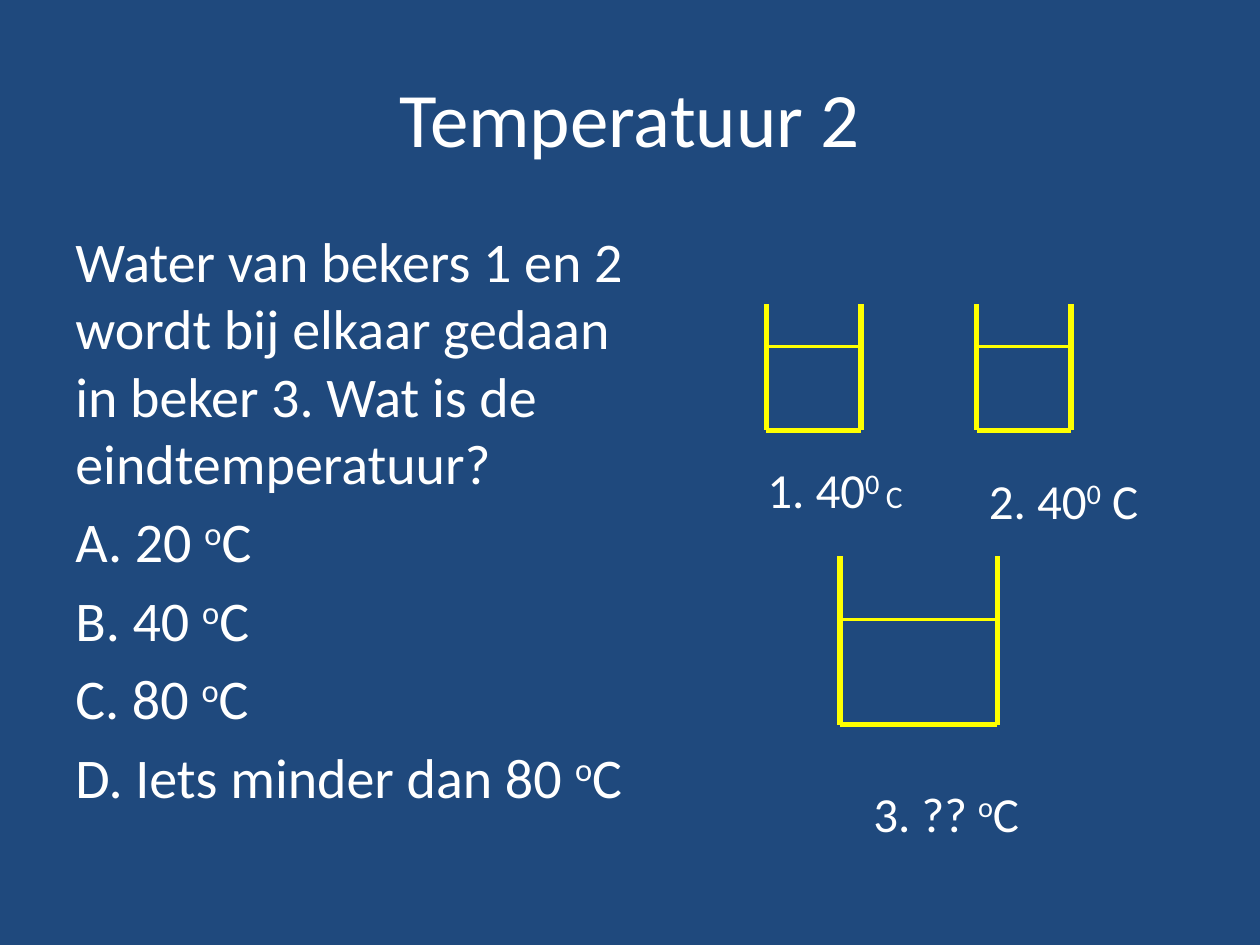
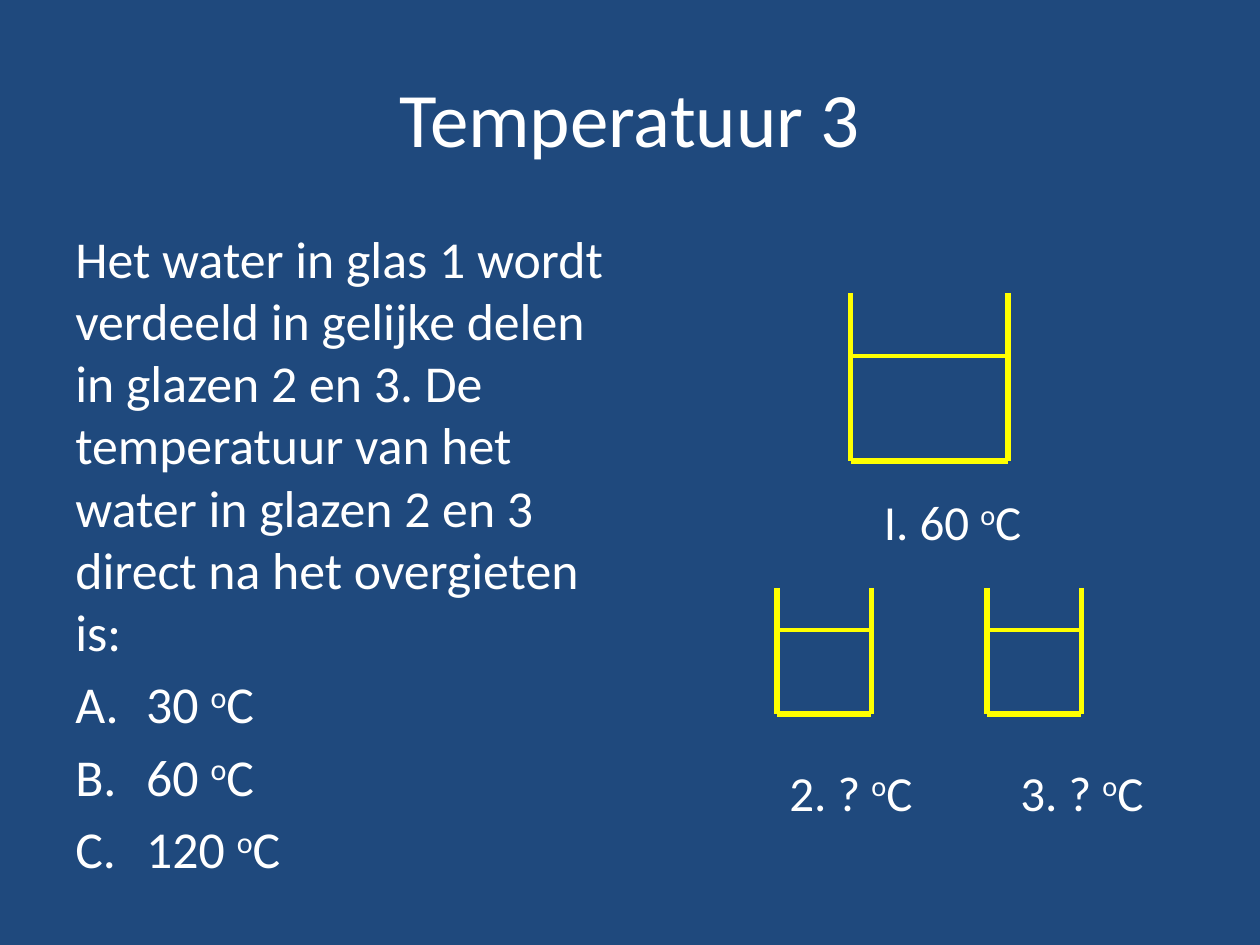
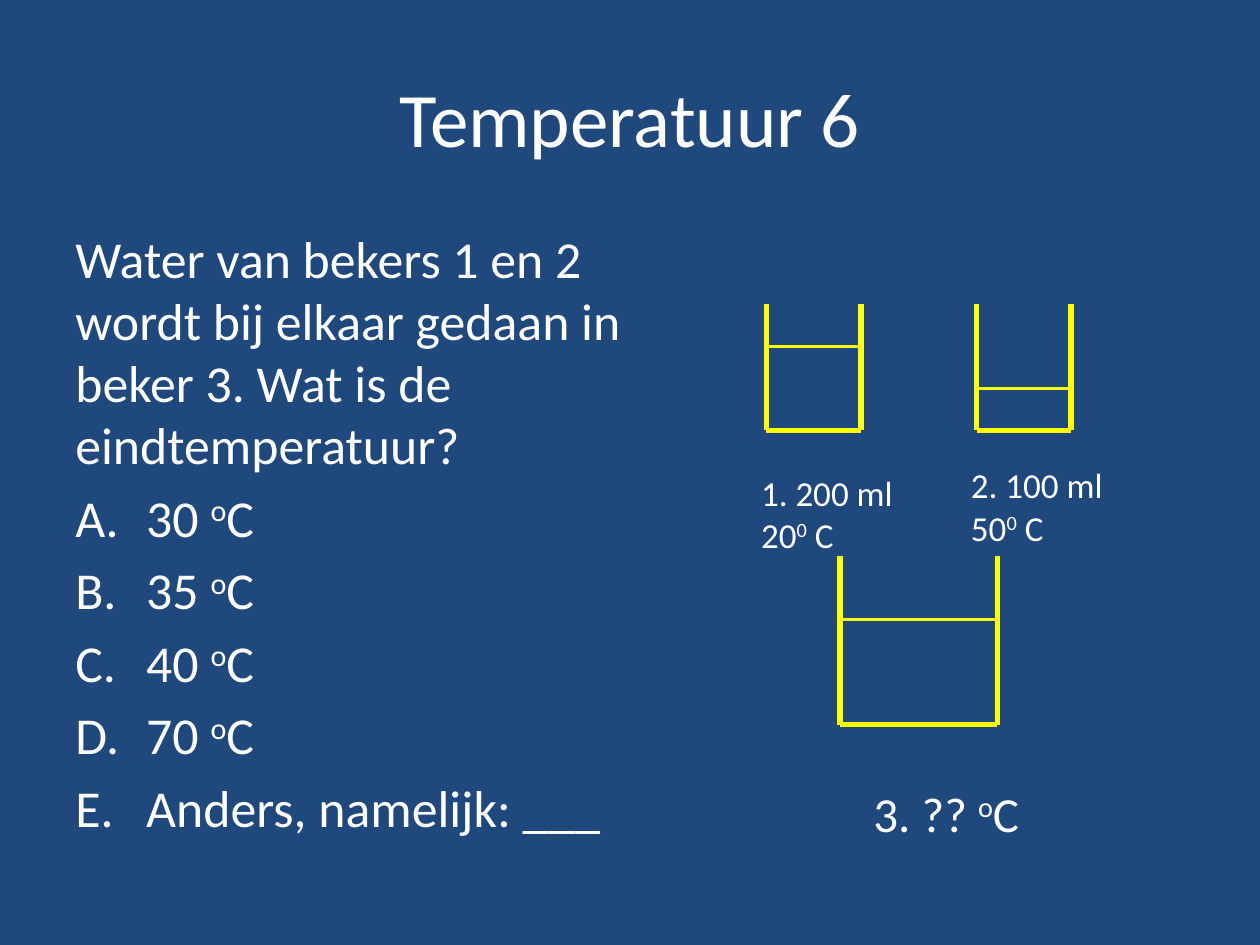
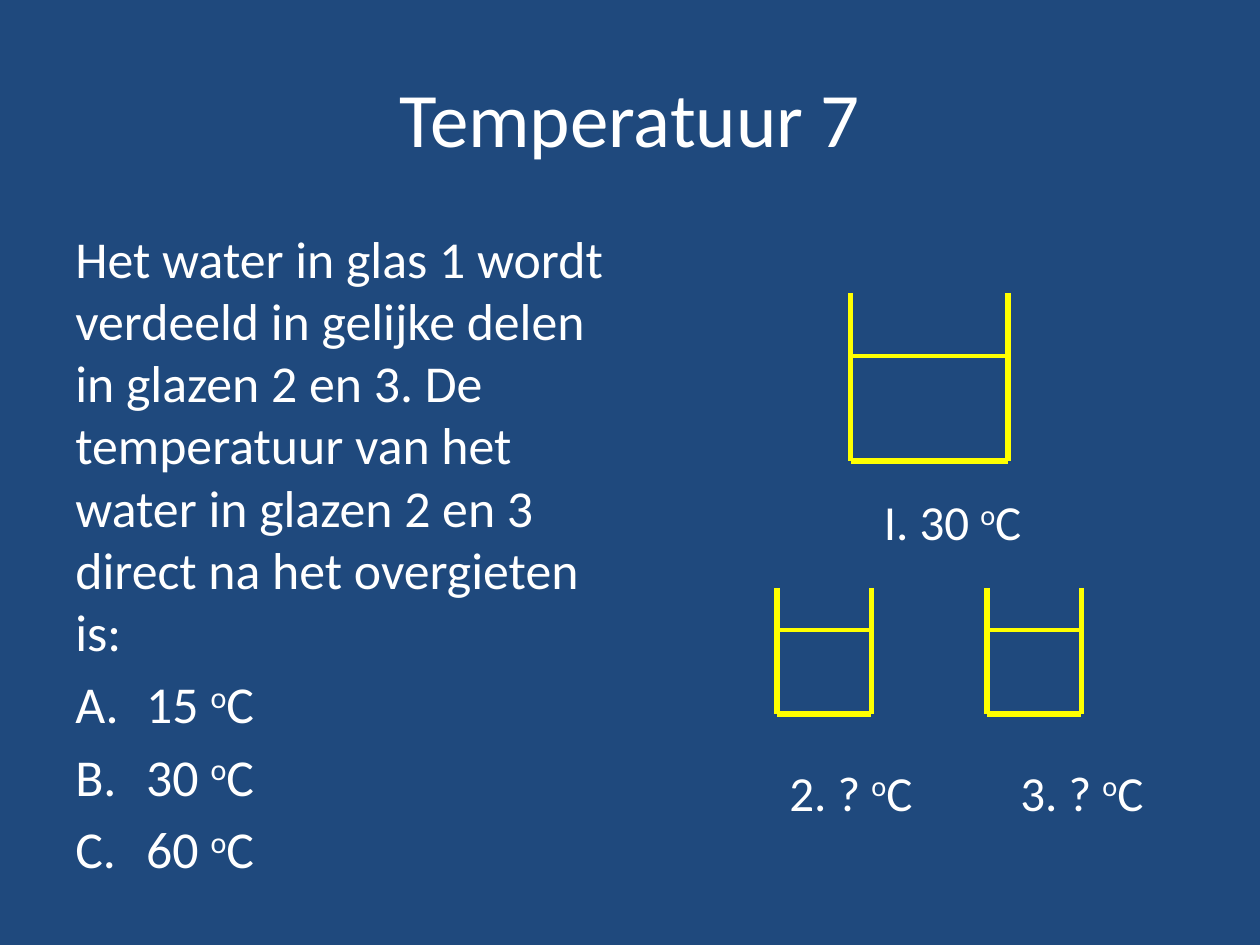
from lxml.etree import SubElement
from pptx import Presentation
from pptx.dml.color import RGBColor
from pptx.enum.shapes import MSO_CONNECTOR as Connector
from pptx.enum.text import MSO_ANCHOR as Anchor, MSO_AUTO_SIZE as AutoSize, PP_ALIGN as Align
from pptx.oxml.ns import qn
from pptx.util import Inches, Pt

COLUMNS, ROWS = 120, 90
SMALL, LARGE = (9, 12), (15, 16)
POUR_QUESTION = ("Water van bekers 1 en 2 wordt bij elkaar gedaan in beker 3. "
                 "Wat is de eindtemperatuur?")
SPLIT_QUESTION = ("Het water in glas 1 wordt verdeeld in gelijke delen in glazen 2 en 3. "
                  "De temperatuur van het water in glazen 2 en 3 direct na het overgieten is:")


def color(value):
    """Turn a hex string into a colour."""
    return RGBColor.from_string(value)


class Quiz:
    """Hold the shared style and the current slide."""

    font = "Calibri"
    ink, ground, glass = color("FFFFFF"), color("1F497D"), color("FFFF00")

    def __init__(self):
        """Start a deck with the shared background."""
        self.deck = Presentation()
        self.deck.slide_width, self.deck.slide_height = Inches(10), Inches(7.5)
        fill = self.deck.slide_master.background.fill
        fill.solid()
        fill.fore_color.rgb = self.ground

    def x(self, columns):
        """Convert grid columns to a length."""
        return round(self.deck.slide_width * columns / COLUMNS)

    def y(self, rows):
        """Convert grid rows to a length."""
        return round(self.deck.slide_height * rows / ROWS)

    def place(self, left, top, width, height):
        """Convert a grid rectangle to lengths."""
        return self.x(left), self.y(top), self.x(width), self.y(height)

    def fill_para(self, para, text, size):
        """Fill a paragraph, raising every second part between carets."""
        para.font.name, para.font.size = self.font, Pt(size)
        para.font.color.rgb = self.ink
        for index, part in enumerate(text.split("^")):
            span = para.add_run()
            span.text = part
            if index % 2:
                span._r.get_or_add_rPr().set("baseline", "30000")

    def start(self, title):
        """Add a slide with its title."""
        self.page = self.deck.slides.add_slide(self.deck.slide_layouts[5])
        box = self.page.shapes.title
        box.left, box.top, box.width, box.height = self.place(6, 3.6, 108, 15)
        box.text_frame.vertical_anchor = Anchor.MIDDLE
        para = box.text_frame.paragraphs[0]
        para.alignment = Align.CENTER
        self.fill_para(para, title, 44)

    def text(self, area, lines, size):
        """Add a text box with one paragraph per line."""
        frame = self.page.shapes.add_textbox(*self.place(*area)).text_frame
        for index, line in enumerate(lines):
            para = frame.add_paragraph() if index else frame.paragraphs[0]
            self.fill_para(para, line, size)
        return frame

    def question(self, lines, size=29.6, numbered=True):
        """Add the question with its answers."""
        frame = self.text((6, 21, 55, 59.4), lines, size)
        frame.word_wrap = True
        for index, para in enumerate(frame.paragraphs):
            para.space_before = Pt(round(size * 0.2, 1))
            if index and numbered:
                props = para._p.get_or_add_pPr()
                indent = self.x(6.75)
                props.set("marL", str(indent))
                props.set("indent", str(-indent))
                bullet = SubElement(props, qn("a:buAutoNum"), type="alphaUcPeriod")
                props.find(qn("a:defRPr")).addprevious(bullet)

    def label(self, left, top, width, *lines, size=28):
        """Add a caption to a beaker."""
        frame = self.text((left, top, width, 6.84 if len(lines) == 1 else 9.24), lines, size)
        frame.word_wrap = False
        frame.auto_size = AutoSize.SHAPE_TO_FIT_TEXT
        return frame

    def line(self, start, end, weight):
        """Draw a straight line between two grid points."""
        edge = self.page.shapes.add_connector(
            Connector.STRAIGHT, self.x(start[0]), self.y(start[1]), self.x(end[0]), self.y(end[1]))
        edge.line.color.rgb, edge.line.width = self.glass, Pt(weight)
        SubElement(edge._element.spPr, qn("a:effectLst"))

    def beaker(self, left, top, size, empty):
        """Draw an open beaker whose water starts some rows below the rim."""
        right, bottom = left + size[0], top + size[1]
        for side in (left, right):
            self.line((side, top), (side, bottom), 3)
        self.line((left, bottom), (right, bottom), 3)
        self.line((left, top + empty), (right, top + empty), 2)

    def pour(self, second_empty):
        """Draw two small beakers above the large one they fill."""
        self.beaker(73, 29, SMALL, 4)
        self.beaker(93, 29, SMALL, second_empty)
        self.beaker(80, 53, LARGE, 6)
        self.label(82, 74, 16.7, "3. ?? ^o^C")

    def split(self, number, source, answers):
        """Build a slide where a large beaker fills two small ones."""
        self.start(f"Temperatuur {number}")
        self.question([SPLIT_QUESTION, *answers])
        for left in (74, 94):
            self.beaker(left, 56, SMALL, 4)
        self.beaker(81, 27.9, LARGE, 6)
        self.label(83, 46.2, 16, f"I. {source} ^o^C")
        for left, name in ((74, 2), (96, 3)):
            self.label(left, 72, 14.5, f"{name}. ? ^o^C")


def degrees(*values):
    """Format temperatures as answers."""
    return [f"{value} ^o^C" for value in values]


def main():
    """Build the four slides."""
    quiz = Quiz()

    quiz.start("Temperatuur 2")
    answers = degrees("A. 20", "B. 40", "C. 80", "D. Iets minder dan 80")
    quiz.question([POUR_QUESTION, *answers], size=32, numbered=False)
    quiz.pour(4)
    first = quiz.label(71.9, 43.2, 16.2, "1. 40^0 ^C")
    first.paragraphs[0].runs[-1].font.size = Pt(18)
    quiz.label(93, 44.2, 17, "2. 40^0^ C")

    quiz.split(3, 60, degrees(30, 60, 120))

    quiz.start("Temperatuur 6")
    quiz.question([POUR_QUESTION, *degrees(30, 35, 40, 70), "Anders, namelijk: ___"])
    quiz.pour(8)
    quiz.label(71.3, 44.3, 16.7, "1. 200 ml", "20^0^ C", size=20)
    quiz.label(91.3, 43.6, 15.1, "2. 100 ml", "50^0^ C", size=20)

    quiz.split(7, 30, degrees(15, 30, 60))

    quiz.deck.save("out.pptx")


if __name__ == "__main__":
    main()
